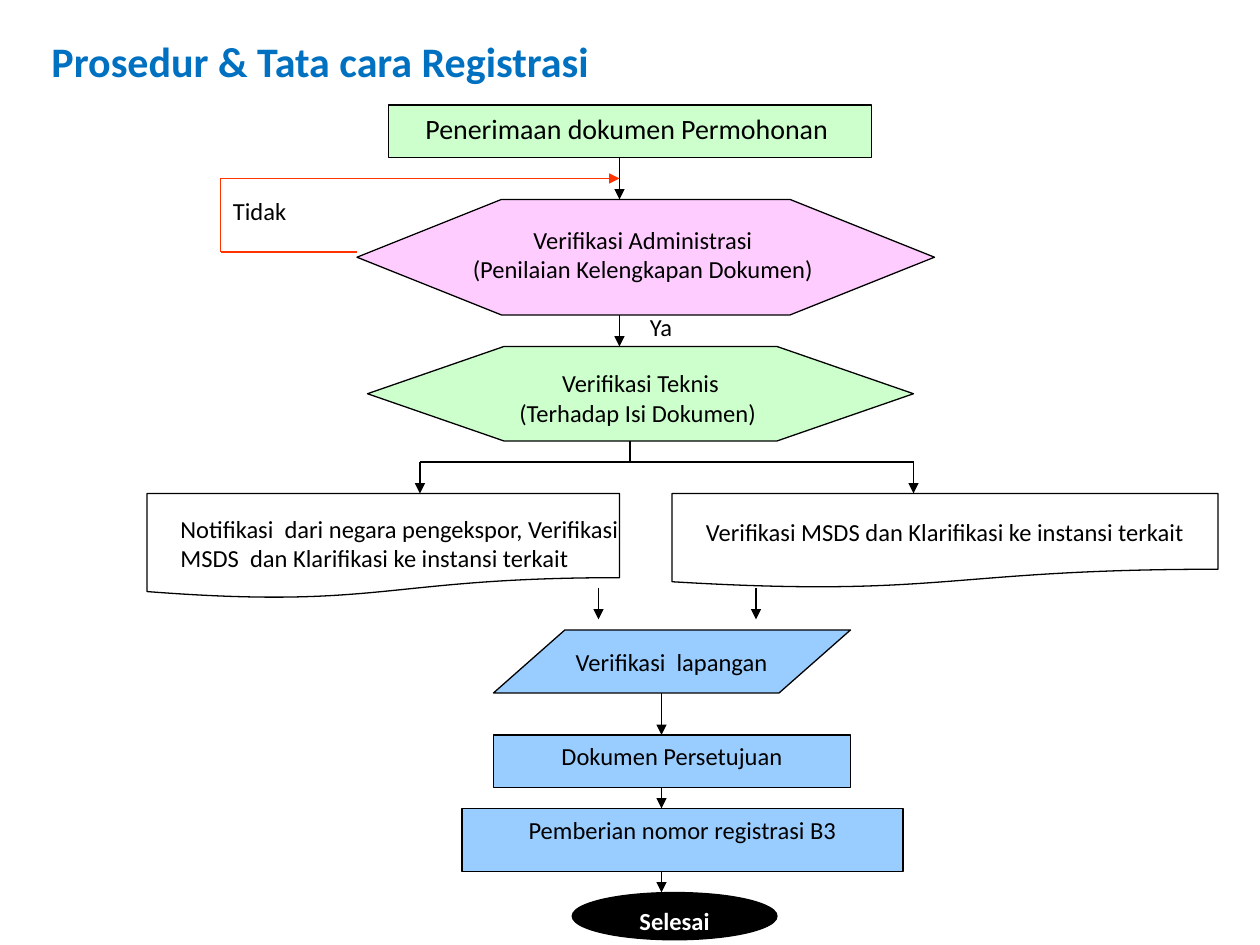
from lxml import etree
from pptx import Presentation
from pptx.dml.color import RGBColor
from pptx.enum import shapes, text
from pptx.oxml import ns
from pptx.util import Pt

FONT = "Calibri"
BLACK, WHITE, RED, TITLE_BLUE = "000000", "FFFFFF", "FF3300", "0070C0"
GREEN, PINK, BLUE = "CCFFCC", "FFCCFF", "99CCFF"
KIND = shapes.MSO_SHAPE


def rgb(value):
    """Turn a hex string into a colour."""
    return RGBColor.from_string(value)


def write(shape, wording, size=14, color=BLACK, bold=False, centered=True,
          wrap=True, anchor=text.MSO_ANCHOR.TOP):
    """Set the text of a shape and format its runs."""
    frame = shape.text_frame
    frame.text = wording
    frame.word_wrap = wrap
    frame.vertical_anchor = anchor
    for paragraph in frame.paragraphs:
        paragraph.alignment = text.PP_ALIGN.CENTER if centered else text.PP_ALIGN.LEFT
        for run in paragraph.runs:
            run.font.name = FONT
            run.font.size = Pt(size)
            run.font.bold = bold
            run.font.color.rgb = rgb(color)


def add_label(slide, box, wording, grow=False, **style):
    """Add a text box, which may grow with its text."""
    label = slide.shapes.add_textbox(*map(Pt, box))
    write(label, wording, wrap=not grow, **style)
    if grow:
        label.text_frame.auto_size = text.MSO_AUTO_SIZE.SHAPE_TO_FIT_TEXT


def add_step(slide, kind, box, fill=None, wording="", **style):
    """Add an outlined flowchart shape with optional fill and text."""
    shape = slide.shapes.add_shape(kind, *map(Pt, box))
    shape.shadow.inherit = False
    if fill:
        shape.fill.solid()
        shape.fill.fore_color.rgb = rgb(fill)
    else:
        shape.fill.background()
    shape.line.color.rgb = rgb(BLACK)
    shape.line.width = Pt(0.75)
    if wording:
        write(shape, wording, **style)
    return shape


def add_line(slide, start, end, color=BLACK, arrow=True):
    """Add a straight line, with an arrowhead at its end if asked."""
    line = slide.shapes.add_connector(
        shapes.MSO_CONNECTOR.STRAIGHT, *map(Pt, (*start, *end)))
    line.line.color.rgb = rgb(color)
    line.line.width = Pt(0.75)
    if arrow:
        etree.SubElement(line.line._get_or_add_ln(), ns.qn("a:tailEnd"), type="triangle")
    etree.SubElement(line._element.spPr, ns.qn("a:effectLst"))


def add_title(slide, box):
    """Place the slide title."""
    add_label(slide, box, "Prosedur & Tata cara Registrasi", grow=True,
              size=24, color=TITLE_BLUE, bold=True, centered=False)


def add_verification(slide, box):
    """Place the application, both checks and the rejection loop."""
    left, top, width, height = box
    axis = left + 228
    add_step(slide, KIND.RECTANGLE, (left + 96, top, 276, 30), GREEN,
             "Penerimaan dokumen Permohonan ", size=16)
    checks = [
        ((left + 78, top + 54, 330, 66), PINK, 1.25,
         "Verifikasi Administrasi \n(Penilaian Kelengkapan Dokumen) "),
        ((left + 84, top + height - 54, 312, 54), GREEN, 1.444,
         "Verifikasi Teknis\n(Terhadap Isi Dokumen) "),
    ]
    for check_box, fill, slant, wording in checks:
        check = add_step(slide, KIND.HEXAGON, check_box, fill, wording)
        check.adjustments[0] = slant
    for start, end in ((30, 54), (120, 138)):
        add_line(slide, (axis, top + start), (axis, top + end))

    upper, lower = top + 42, top + 84
    add_line(slide, (left + 78, lower), (left, lower), RED, arrow=False)
    add_line(slide, (left, upper), (axis, upper), RED)
    add_line(slide, (left, upper), (left, lower), RED, arrow=False)
    add_label(slide, (left, top + 48.7, 49, 24), "Tidak", grow=True, centered=False)
    add_label(slide, (left + 238.3, top + 115, 32, 24), "Ya", grow=True, centered=False)


def add_clarification(slide, box):
    """Place the branch, its two documents and the arrows below them."""
    left, top, width, height = box
    branch, documents = top + 12, top + 30
    first, last = left + 156, left + 438
    add_line(slide, (left + 276, top), (left + 276, branch), arrow=False)
    add_line(slide, (first, branch), (last, branch), arrow=False)
    for x in (first, last):
        add_line(slide, (x, branch), (x, documents))

    add_label(slide, (left + 12, documents + 8, 277, 52),
              "Notifikasi  dari negara pengekspor, Verifikasi "
              "MSDS  dan Klarifikasi ke instansi terkait", centered=False)
    add_step(slide, KIND.FLOWCHART_DOCUMENT, (left, documents, 270, 60))
    add_step(slide, KIND.FLOWCHART_DOCUMENT, (left + width - 312, documents, 312, 54),
             None, "Verifikasi MSDS dan Klarifikasi ke instansi terkait",
             wrap=False, anchor=text.MSO_ANCHOR.MIDDLE)
    for x in (left + 258, left + 348):
        add_line(slide, (x, top + height - 18), (x, top + height))


def add_approval(slide, box):
    """Place the field check, the approval, the number and the end."""
    left, top, width, height = box
    axis = left + 114
    add_step(slide, KIND.FLOWCHART_DATA, (left + 18, top, 204, 36), BLUE)
    add_label(slide, (left + 54, top + 6, 138, 21), "Verifikasi  lapangan  ")
    add_step(slide, KIND.RECTANGLE, (left + 18, top + 60, 204, 30), BLUE,
             "Dokumen Persetujuan")
    add_step(slide, KIND.RECTANGLE, (left, top + 102, width, 36), BLUE,
             "Pemberian nomor registrasi B3")
    add_step(slide, KIND.OVAL, (left + 63, top + height - 27, 117, 27), BLACK,
             "Selesai", color=WHITE, bold=True)
    for start, end in ((36, 60), (90, 102), (138, 150)):
        add_line(slide, (axis, top + start), (axis, top + end))


def main():
    """Build the registration flowchart and save it."""
    presentation = Presentation()
    presentation.slide_width, presentation.slide_height = Pt(720), Pt(540)
    slide = presentation.slides.add_slide(presentation.slide_layouts[6])
    add_title(slide, (22.3, 16.6, 325, 36))
    add_verification(slide, (126, 60, 408, 192))
    add_clarification(slide, (84, 252, 612, 102))
    add_approval(slide, (264, 360, 252, 177))
    presentation.save("out.pptx")


if __name__ == "__main__":
    main()
